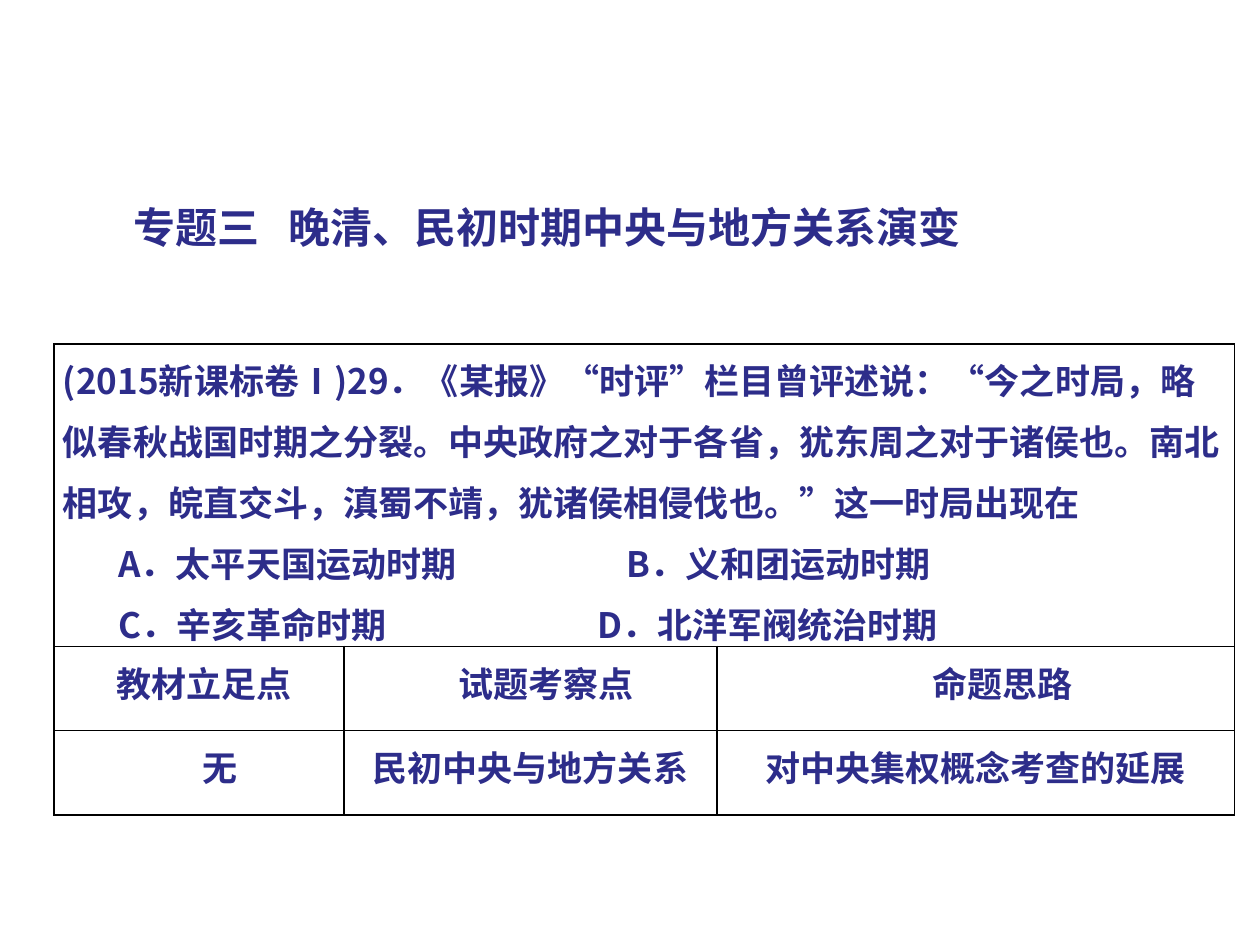
from lxml.etree import SubElement
from pptx import Presentation
from pptx.dml.color import RGBColor
from pptx.enum.text import MSO_ANCHOR, PP_ALIGN
from pptx.oxml.ns import qn
from pptx.util import Inches, Pt

COLORS = {"text": "2D2D8A", "border": "000000", "paper": "FFFFFF"}
FONT = "Noto Sans CJK SC"
WIDTH, HEIGHT = Inches(10), Inches(7.5)
COLUMN_WIDTHS = [2.3, 2.96, 4.11]
ROW_HEIGHTS = [2.4, 0.67, 0.67]
TITLE = ["\t专题三", "\t晚清、民初时期中央与地方关系演变"]
QUESTION = (
    "(2015新课标卷Ⅰ)29．《某报》“时评”栏目曾评述说：“今之时局，"
    "略似春秋战国时期之分裂。中央政府之对于各省，犹东周之对于诸侯也。"
    "南北相攻，皖直交斗，滇蜀不靖，犹诸侯相侵伐也。”这一时局出现在"
)
OPTIONS = [
    ("\tA．太平天国运动时期\tB．义和团运动时期", [0.44, 4.47]),
    ("\tC．辛亥革命时期\tD．北洋军阀统治时期", [0.44, 4.24]),
]
ANALYSIS = [
    [("教材立足点", 0.08), ("试题考察点", 0.25), ("命题思路", 0.42)],
    [("无", 0.33), ("民初中央与地方关系", 0), ("对中央集权概念考查的延展", 0)],
]


def add_run(paragraph, text, size, latin=FONT):
    """Add one bold run in the text colour."""
    run = paragraph.add_run()
    run.text = text
    run.font.size, run.font.bold, run.font.name = Pt(size), True, latin
    run.font.color.rgb = RGBColor.from_string(COLORS["text"])
    SubElement(run.font._element, qn("a:ea"), typeface=FONT)


def set_tabs(paragraph, stops):
    """Give a paragraph left tab stops, in inches."""
    tab_list = SubElement(paragraph._p.get_or_add_pPr(), qn("a:tabLst"))
    for stop in stops:
        SubElement(tab_list, qn("a:tab"), pos=str(Inches(stop)), algn="l")


def style_cell(cell):
    """Set margins, borders and fill of a cell."""
    cell.margin_left = cell.margin_right = Inches(0.07)
    cell.margin_top = cell.margin_bottom = 0
    cell.vertical_anchor = MSO_ANCHOR.TOP
    properties = cell._tc.get_or_add_tcPr()
    for side in ("a:lnL", "a:lnR", "a:lnT", "a:lnB"):
        line = SubElement(properties, qn(side), w=str(Pt(1)))
        fill = SubElement(line, qn("a:solidFill"))
        SubElement(fill, qn("a:srgbClr"), val=COLORS["border"])
    cell.fill.solid()
    cell.fill.fore_color.rgb = RGBColor.from_string(COLORS["paper"])


def add_title(slide, left, top, width, height):
    """Place the topic heading in its box."""
    frame = slide.shapes.add_textbox(left, top, width, height).text_frame
    frame.word_wrap = True
    paragraph = frame.paragraphs[0]
    set_tabs(paragraph, [0.45, 1.68])
    for text, latin in zip(TITLE, (FONT, "Arial")):
        add_run(paragraph, text, 24, latin)


def fill_question(cell):
    """Write the question and its answer options."""
    frame = cell.text_frame
    for index, (text, stops) in enumerate([(QUESTION, []), *OPTIONS]):
        paragraph = frame.add_paragraph() if index else frame.paragraphs[0]
        paragraph.line_spacing = 1.2
        if stops:
            set_tabs(paragraph, stops)
        add_run(paragraph, text, 20)


def fill_analysis(cell, text, indent):
    """Write one centred entry with a first-line indent."""
    paragraph = cell.text_frame.paragraphs[0]
    paragraph.alignment, paragraph.line_spacing = PP_ALIGN.CENTER, 1.2
    paragraph._p.get_or_add_pPr().set("indent", str(Inches(indent)))
    add_run(paragraph, text, 20)


def add_question_table(slide, left, top, width, height):
    """Place the question above its analysis grid."""
    table = slide.shapes.add_table(3, 3, left, top, width, height).table
    table.first_row = table.horz_banding = False
    for column, share in zip(table.columns, COLUMN_WIDTHS):
        column.width = int(width * share / sum(COLUMN_WIDTHS))
    for row, share in zip(table.rows, ROW_HEIGHTS):
        row.height = int(height * share / sum(ROW_HEIGHTS))
    for cell in table.iter_cells():
        style_cell(cell)
    table.cell(0, 0).merge(table.cell(0, 2))
    fill_question(table.cell(0, 0))
    for row, entries in enumerate(ANALYSIS, start=1):
        for column, (text, indent) in enumerate(entries):
            fill_analysis(table.cell(row, column), text, indent)


def main():
    """Build and save the slide."""
    presentation = Presentation()
    presentation.slide_width, presentation.slide_height = WIDTH, HEIGHT
    slide = presentation.slides.add_slide(presentation.slide_layouts[6])
    add_title(slide, Inches(0.51), Inches(1.55), int(WIDTH * 0.9), Inches(0.63))
    add_question_table(
        slide, Inches(0.43), Inches(2.73),
        Inches(sum(COLUMN_WIDTHS)), Inches(sum(ROW_HEIGHTS)),
    )
    presentation.save("out.pptx")


if __name__ == "__main__":
    main()
